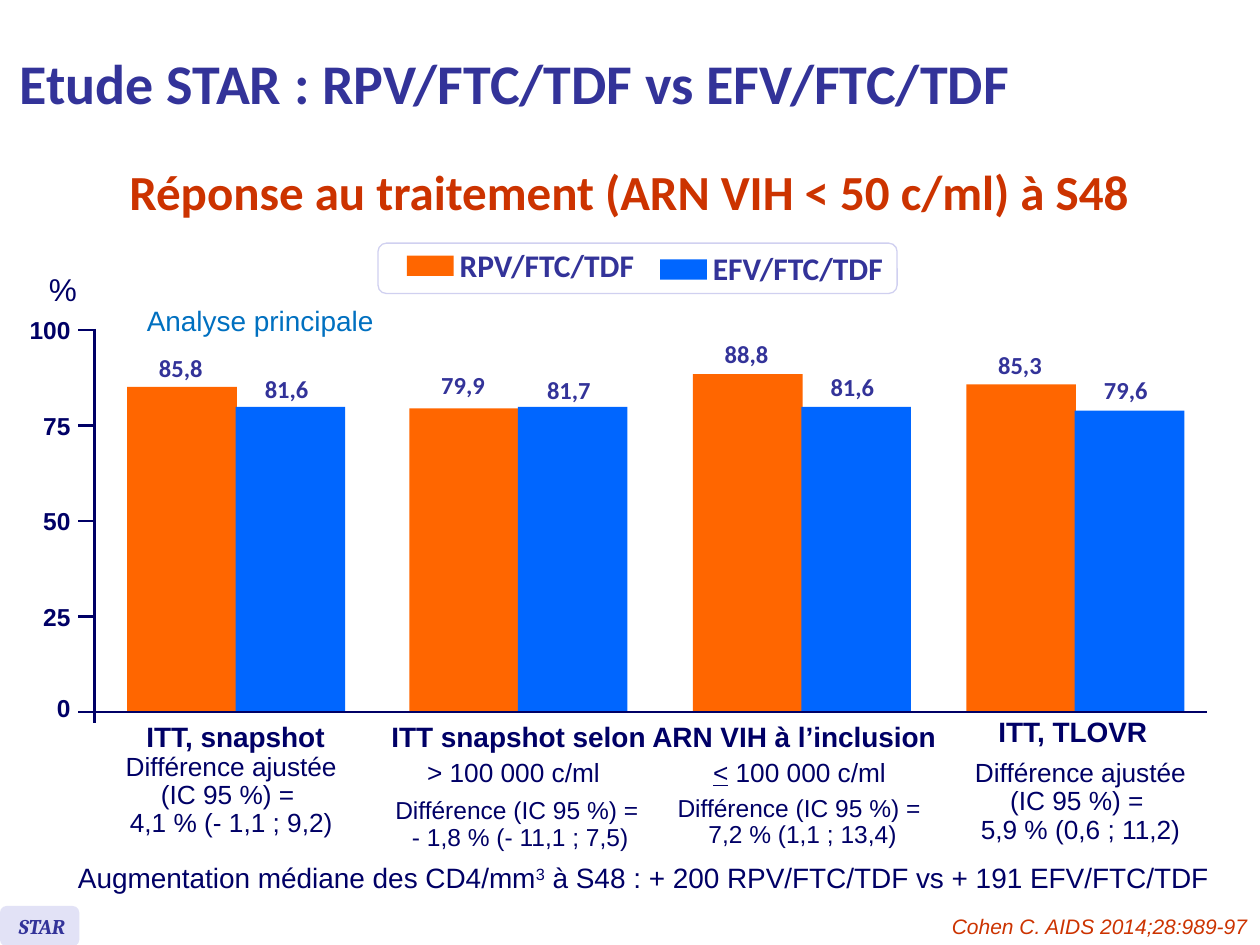
from pptx import Presentation
from pptx.dml.color import RGBColor
from pptx.enum.shapes import MSO_CONNECTOR, MSO_SHAPE
from pptx.enum.text import MSO_ANCHOR, PP_ALIGN
from pptx.oxml.ns import qn
from pptx.util import Inches, Pt
from lxml import etree

RECT, ROUNDED = MSO_SHAPE.RECTANGLE, MSO_SHAPE.ROUNDED_RECTANGLE
STRAIGHT = MSO_CONNECTOR.STRAIGHT
TOP, MIDDLE = MSO_ANCHOR.TOP, MSO_ANCHOR.MIDDLE
LEFT, CENTER, RIGHT = PP_ALIGN.LEFT, PP_ALIGN.CENTER, PP_ALIGN.RIGHT

NAVY, INDIGO, RUST, SKY = "000066", "333399", "CC3300", "0070C0"
ORANGE, BLUE = "FF6600", "0066FF"

BASELINE, SCALE_TOP = 5.65, 2.62
BAR_WIDTH, BAR_STEP = 0.87, 0.86


def rgb(value):
    return RGBColor.from_string(value)


class SlideBuilder:
    def __init__(self, slide):
        self.shapes = slide.shapes
        self.base = {"name": "Arial", "size": 16, "color": NAVY}

    def format_run(self, run, style):
        for key, value in style.items():
            if key == "color":
                run.font.color.rgb = rgb(value)
            elif key == "superscript":
                run.font._element.set("baseline", "30000")
            else:
                setattr(run.font, key, Pt(value) if key == "size" else value)

    def text(self, box, lines, align=CENTER, anchor=TOP, wrap=False,
             margins=(0.1, 0.05), spacing=None, **style):
        """Add a text box; a line is a string or a list of (text, extra style)."""
        frame = self.shapes.add_textbox(*map(Inches, box)).text_frame
        frame.word_wrap = wrap
        frame.vertical_anchor = anchor
        frame.margin_left = frame.margin_right = Inches(margins[0])
        frame.margin_top = frame.margin_bottom = Inches(margins[1])
        for index, line in enumerate(lines):
            paragraph = frame.add_paragraph() if index else frame.paragraphs[0]
            paragraph.alignment = align
            if spacing:
                paragraph.line_spacing = spacing
            for words, extra in [(line, {})] if isinstance(line, str) else line:
                run = paragraph.add_run()
                run.text = words
                self.format_run(run, {**self.base, **style, **extra})

    def block(self, box, fill, kind=RECT, line=None):
        shape = self.shapes.add_shape(kind, *map(Inches, box))
        shape.shadow.inherit = False
        shape.fill.solid()
        shape.fill.fore_color.rgb = rgb(fill)
        if line:
            shape.line.color.rgb = rgb(line)
            shape.line.width = Pt(0.75)
        else:
            shape.line.fill.background()

    def rule(self, x1, y1, x2, y2):
        line = self.shapes.add_connector(STRAIGHT, *map(Inches, (x1, y1, x2, y2)))
        line.line.color.rgb = rgb(NAVY)
        line.line.width = Pt(1.5)
        etree.SubElement(line._element.spPr, qn("a:effectLst"))


def add_axes(page):
    step = (BASELINE - SCALE_TOP) / 4
    for index in range(5):
        y = BASELINE - index * step
        label_y = y if index else y - 0.03
        page.text((0.23, label_y - 0.12, 0.33, 0.24), [str(25 * index)], RIGHT,
                  MIDDLE, margins=(0, 0), size=14, bold=True)
        if index:
            page.rule(0.62, y, 0.75, y)
    page.rule(0.75, 2.61, 0.75, 5.74)
    page.rule(0.62, BASELINE, 9.58, BASELINE)
    page.text((0.28, 2.09, 0.43, 0.4), ["%"], RIGHT, size=18)


def add_bars(page):
    # Group left, then (value, bar top, label top) for each treatment
    groups = [
        (1.01, ("85,8", 3.07, 2.7), ("81,6", 3.23, 2.87)),
        (3.25, ("79,9", 3.24, 2.84), ("81,7", 3.23, 2.88)),
        (5.5, ("88,8", 2.97, 2.59), ("81,6", 3.23, 2.85)),
        (7.67, ("85,3", 3.05, 2.68), ("79,6", 3.26, 2.88)),
    ]
    for left, *bars in groups:
        for index, (value, top, label_top) in enumerate(bars):
            x = left + index * BAR_STEP
            page.block((x, top, BAR_WIDTH, BASELINE - top), (ORANGE, BLUE)[index])
            page.text((x + 0.15 - 0.02 * index, label_top, 0.55, 0.44), [value],
                      margins=(0.1, 0.1), name="Calibri", size=14, bold=True,
                      color=INDIGO)


def add_legend(page):
    page.block((3, 1.93, 4.12, 0.4), "FFFFFF", ROUNDED, "D0D0F0")
    for name, color, x, y in [("RPV/FTC/TDF", ORANGE, 3.23, 2.03),
                              ("EFV/FTC/TDF", BLUE, 5.24, 2.06)]:
        page.block((x, y, 0.37, 0.16), color)
        page.text((x + 0.32, y - 0.13, 1.74, 0.4), [name], LEFT, wrap=True,
                  name="Calibri", size=18, bold=True, color=INDIGO)


def add_group_notes(page):
    for heading, x, y, width in [
        ("ITT, snapshot", 1.05, 5.66, 1.64),
        ("ITT snapshot selon ARN VIH à l’inclusion", 2.98, 5.66, 4.58),
        ("ITT, TLOVR", 7.81, 5.62, 1.41),
    ]:
        page.text((x, y, width, 0.37), [heading], bold=True)

    for result, x, y in [("4,1 % (- 1,1 ; 9,2)", 0.89, 5.93),
                         ("5,9 % (0,6 ; 11,2)", 7.63, 5.98)]:
        page.text((x, y, 1.89, 0.79),
                  ["Différence ajustée", "(IC 95 %) = ", result],
                  spacing=0.9, size=15)

    underlined = [("<", {"underline": True}), (" 100 000 c/ml", {})]
    for stratum, stratum_x, result, x, y in [
        ("> 100 000 c/ml", 3.28, "- 1,8 % (- 11,1 ; 7,5)", 3.01, 6.29),
        (underlined, 5.55, "7,2 % (1,1 ; 13,4)", 5.25, 6.27),
    ]:
        page.text((stratum_x, 5.98, 1.59, 0.33), [stratum], spacing=0.9, size=15)
        page.text((x, y, 2.24, 0.53), ["Différence (IC 95 %) = ", result],
                  wrap=True, spacing=0.9, size=14)


def main():
    deck = Presentation()
    deck.slide_width, deck.slide_height = Inches(10), Inches(7.5)
    page = SlideBuilder(deck.slides.add_slide(deck.slide_layouts[6]))

    page.text((0.06, 0.05, 9.55, 1.21), ["Etude STAR : RPV/FTC/TDF vs EFV/FTC/TDF"],
              LEFT, MIDDLE, wrap=True, name="Calibri", size=32, bold=True,
              color=INDIGO)
    page.text((0.88, 1.23, 8.22, 0.57),
              ["Réponse au traitement (ARN VIH < 50 c/ml) à S48"],
              name="Calibri", size=28, bold=True, color=RUST)

    add_bars(page)
    add_axes(page)
    add_legend(page)
    page.text((1.01, 2.36, 2.11, 0.37), ["Analyse principale"], wrap=True, color=SKY)
    add_group_notes(page)

    cd4_gain = [("Augmentation médiane des CD4/mm", {}), ("3", {"superscript": True}),
                (" à S48 : + 200 RPV/FTC/TDF vs + 191 EFV/FTC/TDF", {})]
    page.text((0.52, 6.78, 9.35, 0.37), [cd4_gain], LEFT, MIDDLE, wrap=True)
    page.text((7, 7.2, 3, 0.3), ["Cohen C. AIDS 2014;28:989-97"], RIGHT, wrap=True,
              size=12, italic=True, color=RUST)
    page.block((0, 7.19, 0.63, 0.32), "E2E2F6", ROUNDED)
    page.text((0.05, 7.2, 0.61, 0.3), ["STAR"], LEFT, wrap=True, name="Cambria",
              size=12, bold=True, italic=True, color=INDIGO)

    deck.save("out.pptx")


if __name__ == "__main__":
    main()
